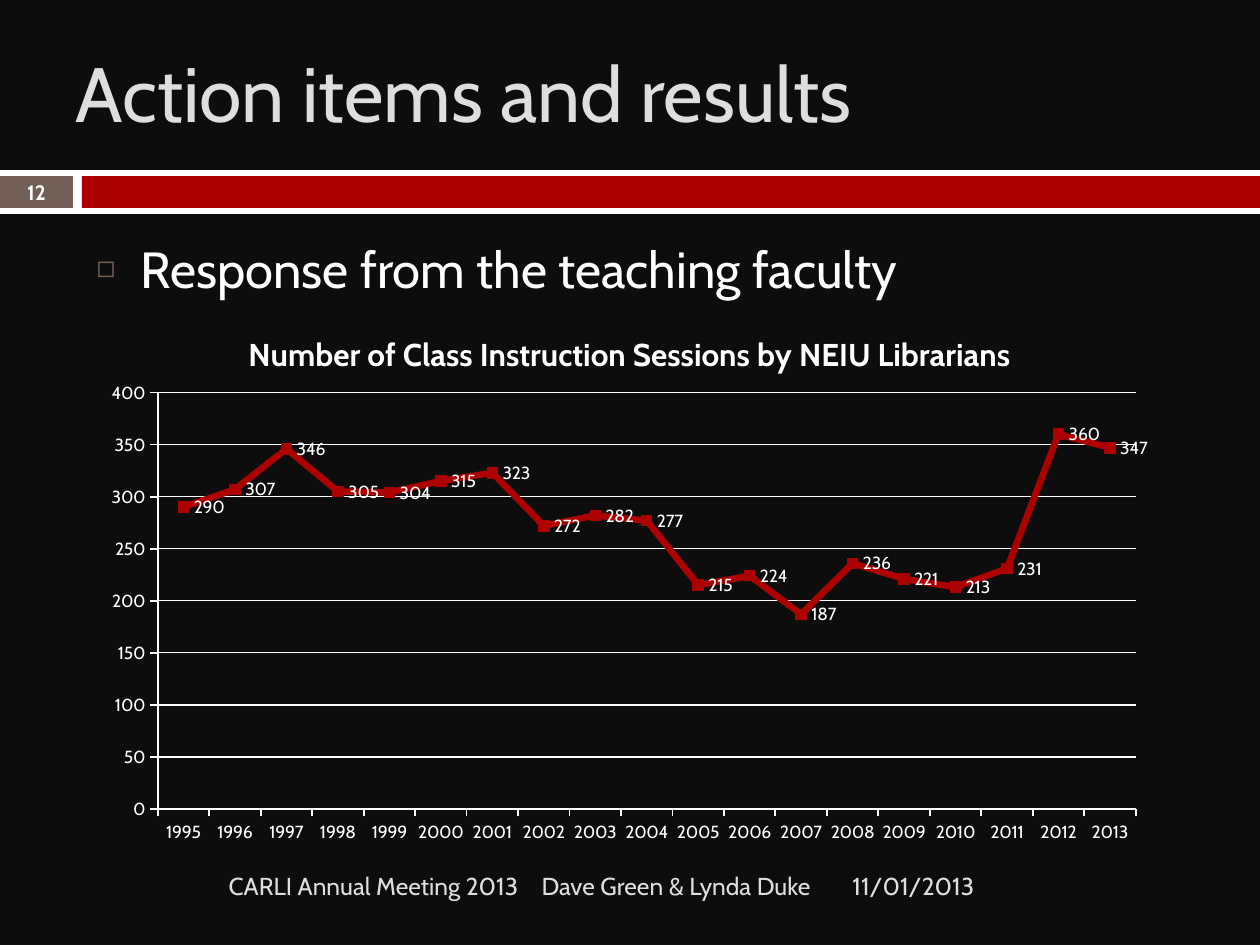
from lxml import etree
from pptx import Presentation
from pptx.chart.data import CategoryChartData
from pptx.dml.color import RGBColor
from pptx.enum.chart import XL_CHART_TYPE, XL_LABEL_POSITION, XL_MARKER_STYLE, XL_TICK_MARK
from pptx.enum.shapes import MSO_SHAPE
from pptx.enum.text import MSO_ANCHOR, MSO_AUTO_SIZE, PP_ALIGN
from pptx.oxml import parse_xml
from pptx.oxml.ns import nsdecls, qn
from pptx.util import Emu, Pt

RECTANGLE = MSO_SHAPE.RECTANGLE
LEFT, CENTER, RIGHT = PP_ALIGN.LEFT, PP_ALIGN.CENTER, PP_ALIGN.RIGHT
TOP, MIDDLE = MSO_ANCHOR.TOP, MSO_ANCHOR.MIDDLE
NO_FIT = MSO_AUTO_SIZE.NONE
LINE_MARKERS = XL_CHART_TYPE.LINE_MARKERS
SQUARE = XL_MARKER_STYLE.SQUARE
LABEL_RIGHT = XL_LABEL_POSITION.RIGHT
TICK_OUT, TICK_NONE = XL_TICK_MARK.OUTSIDE, XL_TICK_MARK.NONE

COLORS = {
    "background": "0D0D0D",
    "white": "FFFFFF",
    "red": "AD0101",
    "taupe": "726056",
    "silver": "DEDEE0",
}
FONT = "Cabin"
EMU_PER_PX = 914400 / 126
SESSIONS = [290, 307, 346, 305, 304, 315, 323, 272, 282, 277,
            215, 224, 187, 236, 221, 213, 231, 360, 347]
YEARS = [str(1995 + offset) for offset in range(len(SESSIONS))]


def px(length):
    return Emu(round(length * EMU_PER_PX))


def color(name):
    return RGBColor.from_string(COLORS[name])


def set_format(target, values):
    for name, value in values.items():
        setattr(target, name, value)


class SlideBuilder:
    def __init__(self, deck):
        self.page = deck.slides.add_slide(deck.slide_layouts[1])
        fill = self.page.background.fill
        fill.solid()
        fill.fore_color.rgb = color("background")

    def style_font(self, font, size, tone, bold=False):
        set_format(font, {"name": FONT, "size": Pt(size), "bold": bold})
        font.color.rgb = color(tone)

    def place(self, box, left, top, width, height):
        set_format(box, {"left": px(left), "top": px(top),
                         "width": px(width), "height": px(height)})

    def fill_text(self, box, parts, size, tone, align=LEFT, anchor=MIDDLE, bold=False):
        frame = box.text_frame
        set_format(frame, {"word_wrap": True, "auto_size": NO_FIT,
                           "vertical_anchor": anchor})
        para = frame.paragraphs[0]
        para.alignment = align
        for part in parts:
            span = para.add_run()
            span.text = part
            self.style_font(span.font, size, tone, bold)
        return para

    def bar(self, bounds, tone):
        box = self.page.shapes.add_shape(RECTANGLE, *map(px, bounds))
        box.shadow.inherit = False
        box.fill.solid()
        box.fill.fore_color.rgb = color(tone)
        box.line.fill.background()

    def text(self, bounds, parts, size, tone, **options):
        box = self.page.shapes.add_textbox(*map(px, bounds))
        return self.fill_text(box, parts, size, tone, **options)

    def title(self, bounds, words):
        box = self.page.shapes.title
        self.place(box, *bounds)
        self.fill_text(box, [words], 44, "silver")

    def bullet(self, bounds, words):
        box = self.page.placeholders[1]
        self.place(box, *bounds)
        para = self.fill_text(box, [words], 29, "white", anchor=TOP)
        set_format(para, {"space_before": Pt(7), "line_spacing": 1.0})
        properties = para._p.get_or_add_pPr()
        properties.set("marL", str(px(44)))
        properties.set("indent", str(-px(44)))
        bullet_color = etree.SubElement(properties, qn("a:buClr"))
        etree.SubElement(bullet_color, qn("a:srgbClr"), val=COLORS["taupe"])
        etree.SubElement(properties, qn("a:buSzPct"), val="60000")
        etree.SubElement(properties, qn("a:buChar"), char="◻")

    def set_layout(self, parent, position, **values):
        for previous in parent.findall(qn("c:layout")):
            parent.remove(previous)
        layout = parse_xml(f"<c:layout {nsdecls('c')}><c:manualLayout/></c:layout>")
        for name, value in values.items():
            etree.SubElement(layout[0], qn(f"c:{name}"), val=str(value))
        parent.insert(position, layout)

    def style_axis(self, axis):
        set_format(axis, {"major_tick_mark": TICK_OUT, "minor_tick_mark": TICK_NONE})
        self.style_font(axis.tick_labels.font, 10, "white")
        self.style_line(axis.format.line, 1, "white")

    def style_line(self, line, width, tone):
        line.color.rgb = color(tone)
        line.width = Pt(width)

    def line_chart(self, bounds, heading, categories, values):
        data = CategoryChartData()
        data.categories = categories
        data.add_series("Series 1", values)
        chart = self.page.shapes.add_chart(LINE_MARKERS, *map(px, bounds), data).chart
        set_format(chart, {"has_legend": False, "has_title": True})
        self.style_font(chart.font, 10, "white")

        span = chart.chart_title.text_frame.paragraphs[0].add_run()
        span.text = heading
        self.style_font(span.font, 18, "white", True)
        self.set_layout(chart.chart_title._element, 1,
                        xMode="edge", yMode="edge", x=0.14, y=0.04)
        self.set_layout(chart._chartSpace.chart.plotArea, 0, layoutTarget="inner",
                        xMode="edge", yMode="edge", x=0.06, y=0.16, w=0.92, h=0.76)

        self.style_axis(chart.category_axis)
        value_axis = chart.value_axis
        self.style_axis(value_axis)
        set_format(value_axis, {"minimum_scale": 0, "maximum_scale": 400,
                                "major_unit": 50, "has_major_gridlines": True})
        self.style_line(value_axis.major_gridlines.format.line, 0.75, "white")

        plot = chart.plots[0]
        plot.vary_by_categories = False
        series = plot.series[0]
        series.smooth = False
        self.style_line(series.format.line, 3.75, "red")
        set_format(series.marker, {"style": SQUARE, "size": 6})
        series.marker.format.fill.solid()
        series.marker.format.fill.fore_color.rgb = color("red")
        self.style_line(series.marker.format.line, 0.75, "red")
        labels = series.data_labels
        set_format(labels, {"show_value": True, "position": LABEL_RIGHT})
        self.style_font(labels.font, 10, "white")


def main():
    deck = Presentation()
    set_format(deck, {"slide_width": px(1260), "slide_height": px(945)})
    slide = SlideBuilder(deck)
    slide.bar((0, 170, 1260, 44), "white")
    slide.bar((0, 176, 73, 32), "taupe")
    slide.bar((82, 176, 1178, 32), "red")
    slide.title((63, 32, 1113, 119), "Action items and results")
    slide.text((840, 861, 368, 50), ["11/01/2013"], 14, "silver")
    footer = slide.text((76, 861, 747, 50),
                        ["CARLI Annual Meeting 2013", " ", "Dave Green & Lynda Duke"],
                        14, "silver", align=RIGHT)
    footer.runs[1]._r.get_or_add_rPr().set("spc", "990")
    slide.text((0, 175, 73, 34), ["12"], 11.9, "white", align=CENTER, bold=True)
    slide.bullet((84, 231, 882, 609), "Response from the teaching faculty")
    slide.line_chart((94, 305, 1063, 548),
                     "Number of Class Instruction Sessions by NEIU Librarians",
                     YEARS, SESSIONS)
    deck.save("out.pptx")


if __name__ == "__main__":
    main()
